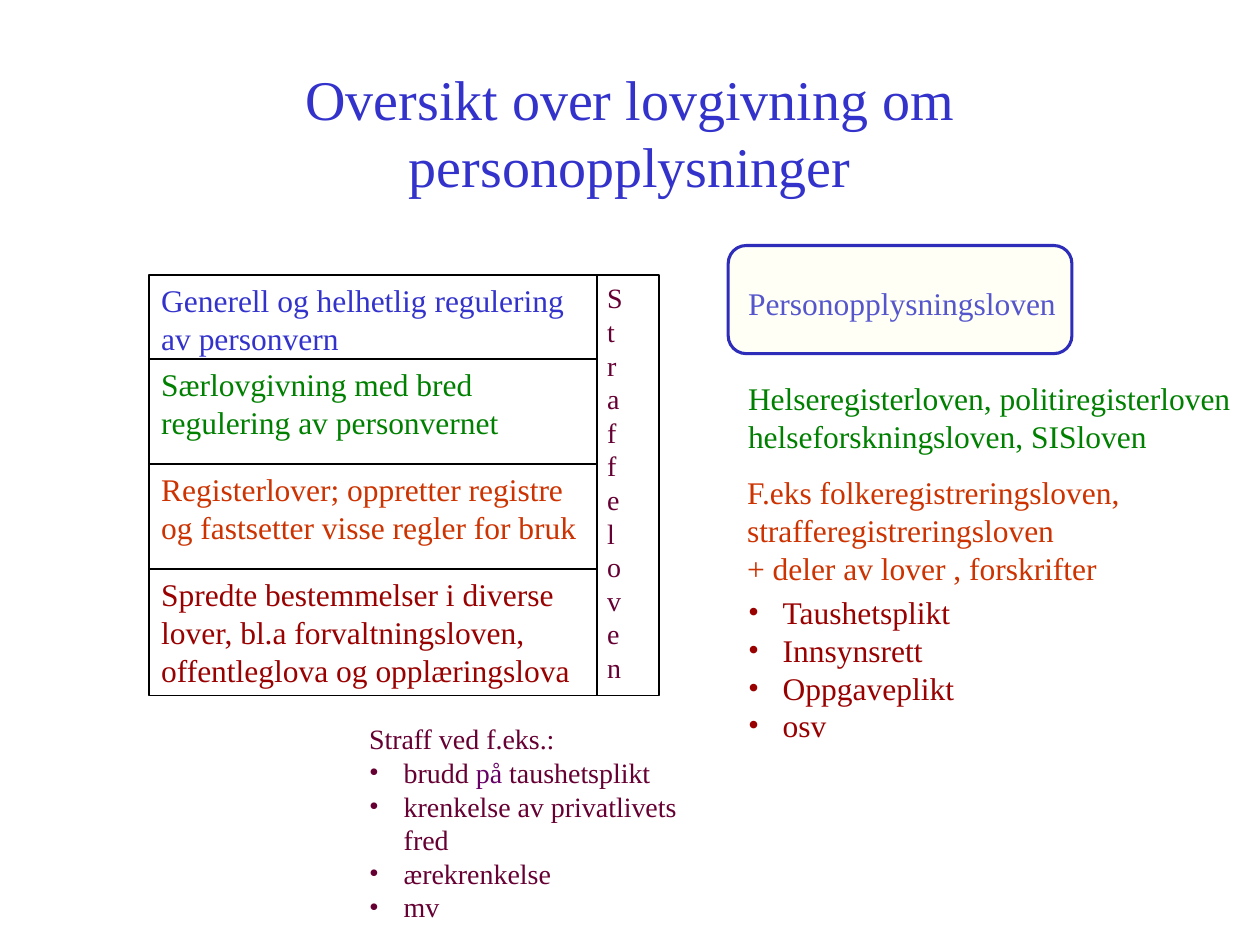
from itertools import accumulate

from lxml.etree import SubElement
from pptx import Presentation
from pptx.dml.color import RGBColor as Color
from pptx.enum.shapes import MSO_SHAPE as Shape
from pptx.enum.text import MSO_ANCHOR as Anchor, PP_ALIGN as Align
from pptx.oxml.ns import qn
from pptx.util import Cm, Pt

THEME = {
    "font": "Times New Roman",
    "sizes": {"title": 32, "body": 18, "small": 16},
    "colors": {
        "blue": "3333CC", "green": "008000", "orange": "CC3300",
        "red": "990000", "plum": "660033", "violet": "660066",
        "black": "000000", "white": "FFFFFF", "cream": "FFFFCC", "frame": "2D2DB9",
    },
}

TITLE = "Oversikt over lovgivning om personopplysninger"

LAYERS = [
    ("Generell og helhetlig regulering av personvern", "blue", 1.7),
    ("Særlovgivning med bred regulering av personvernet", "green", 2.12),
    ("Registerlover; oppretter registre og fastsetter visse regler for bruk", "orange", 2.11),
    ("Spredte bestemmelser i diverse lover, bl.a forvaltningsloven, "
     "offentleglova og opplæringslova", "red", 2.55),
]
DRAW_ORDER = [2, 3, 0, 1]
PENAL_LAW = "Straffeloven"

EXAMPLES = [
    {"place": (14.83, 5.61, 6.78, 1.0), "color": "blue",
     "lines": ["Personopplysningsloven"]},
    {"place": (14.83, 7.52, 10.39, 1.8), "color": "green",
     "lines": ["Helseregisterloven, politiregisterloven", "helseforskningsloven, SISloven"]},
    {"place": (14.81, 9.42, 8.1, 2.57), "color": "orange",
     "lines": ["F.eks folkeregistreringsloven,", "strafferegistreringsloven",
               "+ deler av lover , forskrifter"]},
    {"place": (14.83, 11.83, 6.35, 3.3), "color": "red", "bullets_from": 0,
     "lines": ["Taushetsplikt", "Innsynsrett", "Oppgaveplikt", "osv"]},
    {"place": (7.19, 14.43, 7.44, 3.63), "color": "plum", "size": "small",
     "bullets_from": 1, "wrap": True,
     "lines": ["Straff ved f.eks.:",
               [("brudd", "plum"), (" på", "violet"), (" taushetsplikt", "plum")],
               "krenkelse av privatlivets fred", "ærekrenkelse", "mv"]},
]

STACK_LEFT, STACK_TOP, STACK_WIDTH = 3.0, 5.54, 9.04
PENAL_LEFT, PENAL_WIDTH = 11.99, 1.3
FRAME = (14.68, 4.95, 6.93, 2.18)
BULLET_INDENT = 0.7


def color_of(name):
    return Color.from_string(THEME["colors"][name])


def apply(target, formats):
    for name, value in formats.items():
        setattr(target, name, value)


def add_bullet(para):
    properties = para._p.get_or_add_pPr()
    indent = Cm(BULLET_INDENT)
    properties.set("marL", str(indent))
    properties.set("indent", str(-indent))
    SubElement(properties, qn("a:buFont")).set("typeface", THEME["font"])
    SubElement(properties, qn("a:buChar")).set("char", "•")


def write(box, lines, color, size="body", bullets_from=None, wrap=True,
          align=Align.LEFT, anchor=Anchor.TOP):
    frame = box.text_frame
    apply(frame, {"word_wrap": wrap, "vertical_anchor": anchor})
    for number, line in enumerate(lines):
        para = frame.paragraphs[0] if number == 0 else frame.add_paragraph()
        para.alignment = align
        if bullets_from is not None and number >= bullets_from:
            add_bullet(para)
        for text, tint in [(line, color)] if isinstance(line, str) else line:
            span = para.add_run()
            span.text = text
            apply(span.font, {"name": THEME["font"], "size": Pt(THEME["sizes"][size])})
            span.font.color.rgb = color_of(tint)


def add_panel(page, kind, place, fill, line, weight):
    panel = page.shapes.add_shape(kind, *map(Cm, place))
    panel.shadow.inherit = False
    panel.fill.solid()
    panel.fill.fore_color.rgb = color_of(fill)
    panel.line.color.rgb = color_of(line)
    panel.line.width = Pt(weight)
    return panel


def add_text(page, place, lines, color, **formats):
    box = page.shapes.add_textbox(*map(Cm, place))
    write(box, lines, color, **formats)


def add_stack(page):
    heights = [height for _, _, height in LAYERS]
    tops = list(accumulate(heights, initial=STACK_TOP))
    penal_place = (PENAL_LEFT, STACK_TOP, PENAL_WIDTH, sum(heights))
    penal = add_panel(page, Shape.RECTANGLE, penal_place, "white", "black", 1)
    write(penal, list(PENAL_LAW), "plum", size="small")
    for number in DRAW_ORDER:
        text, color, height = LAYERS[number]
        place = (STACK_LEFT, tops[number], STACK_WIDTH, height)
        layer = add_panel(page, Shape.RECTANGLE, place, "white", "black", 1)
        write(layer, [text], color)


def add_frame(page):
    frame = add_panel(page, Shape.ROUNDED_RECTANGLE, FRAME, "cream", "frame", 1.75)
    tint = frame._element.spPr.find(qn("a:solidFill"))[0]
    SubElement(tint, qn("a:alpha")).set("val", "17000")


def main():
    deck = Presentation()
    apply(deck, {"slide_width": Cm(25.4), "slide_height": Cm(19.05)})
    page = deck.slides.add_slide(deck.slide_layouts[6])
    add_text(page, (1.9, 1.07, 21.6, 3.18), [TITLE], "blue", size="title",
             align=Align.CENTER, anchor=Anchor.MIDDLE)
    add_stack(page)
    for example in EXAMPLES:
        add_text(page, **{"wrap": False, **example})
    add_frame(page)
    deck.save("out.pptx")


if __name__ == "__main__":
    main()
